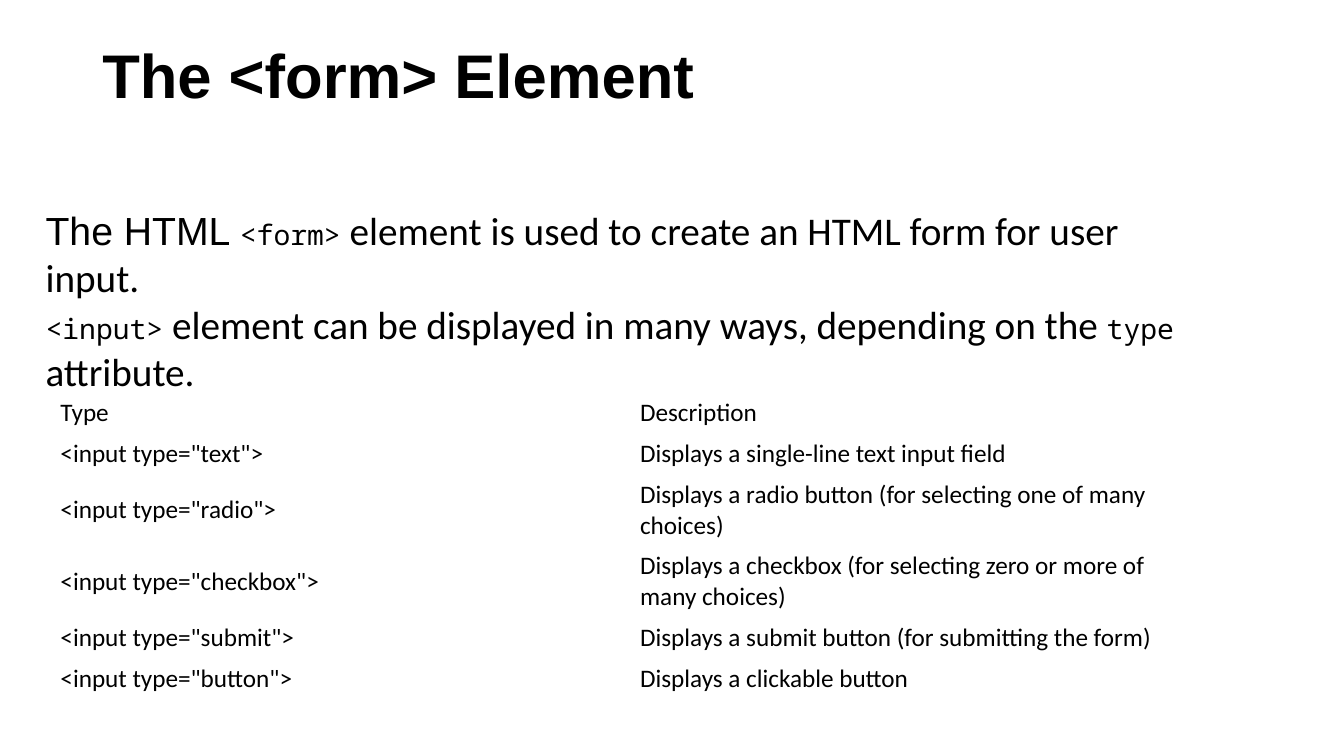
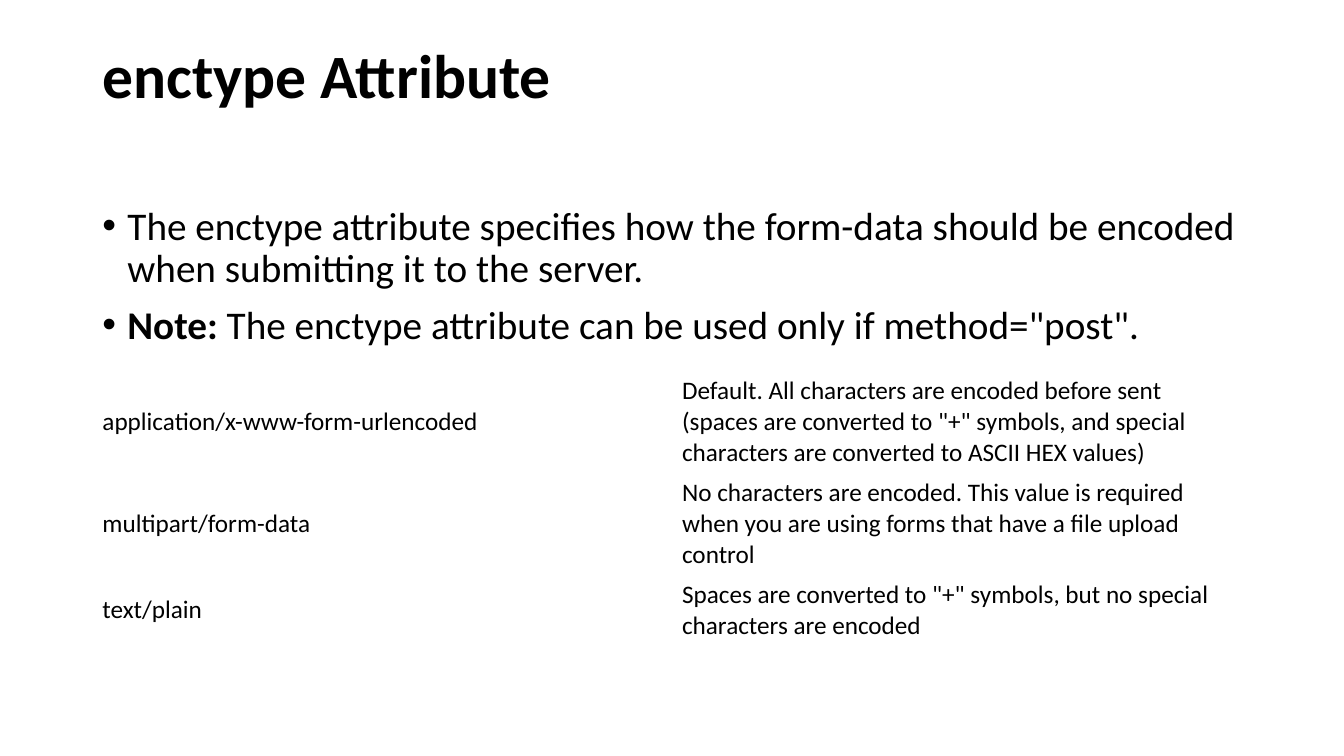
"""Build two slides about HTML form elements and their encoding."""
from dataclasses import dataclass

from lxml import etree
from pptx import Presentation
from pptx import util as u
from pptx.dml.color import RGBColor
from pptx.enum import text
from pptx.oxml.ns import qn

PX = 9525


@dataclass(frozen=True)
class Style:
    """Font, size and weight of a piece of text."""
    font: str
    size: int
    bold: bool = False


@dataclass(frozen=True)
class Theme:
    """Colours, type styles and measures shared by the slides."""
    ink: RGBColor = RGBColor(0, 0, 0)
    title: Style = Style("Calibri", 44, True)
    title_arial: Style = Style("Arial", 44, True)
    body: Style = Style("Calibri", 28)
    body_arial: Style = Style("Arial", 28)
    strong: Style = Style("Calibri", 28, True)
    code: Style = Style("Noto Sans Mono", 20)
    cell: Style = Style("Calibri", 18)
    margin: int = 88
    width: int = 1104
    tight: float = 0.9
    bullet_gap: int = 10
    bullet_indent: int = 24
    row: int = 39
    extra_line: int = 29


THEME = Theme()

FORM_TEXT = [
    [("The HTML ", THEME.body_arial), ("<form>", THEME.code),
     (" element is used to create an HTML form for user input.", THEME.body)],
    [("<input>", THEME.code),
     (" element can be displayed in many ways, depending on the ", THEME.body),
     ("type", THEME.code), (" attribute.", THEME.body)],
]
INPUT_TYPES = [
    ("Type", "Description", 1),
    ('<input type="text">', "Displays a single-line text input field", 1),
    ('<input type="radio">',
     "Displays a radio button (for selecting one of many choices)", 2),
    ('<input type="checkbox">',
     "Displays a checkbox (for selecting zero or more of many choices)", 2),
    ('<input type="submit">',
     "Displays a submit button (for submitting the form)", 1),
    ('<input type="button">', "Displays a clickable button", 1),
]
ENCTYPE_TEXT = [
    [("The enctype attribute specifies how the form-data should be encoded "
      "when submitting it to the server.", THEME.body)],
    [("Note:", THEME.strong),
     (' The enctype attribute can be used only if method="post".', THEME.body)],
]
ENCODINGS = [
    ("application/x-www-form-urlencoded",
     'Default. All characters are encoded before sent (spaces are converted '
     'to "+" symbols, and special characters are converted to ASCII HEX values)', 3),
    ("multipart/form-data",
     "No characters are encoded. This value is required when you are using "
     "forms that have a file upload control", 3),
    ("text/plain",
     'Spaces are converted to "+" symbols, but no special characters are encoded', 2),
]


def px(count):
    """Turn whole pixels into EMU."""
    return u.Emu(count * PX)


def set_font(font, style):
    """Apply a style in the ink colour."""
    font.name, font.size, font.bold = style.font, u.Pt(style.size), style.bold
    font.color.rgb = THEME.ink


def write(paragraph, pieces):
    """Fill a paragraph, styling it whole where its pieces agree."""
    uniform = len({style for _, style in pieces}) == 1
    if uniform:
        set_font(paragraph.font, pieces[0][1])
    for words, style in pieces:
        run = paragraph.add_run()
        run.text = words
        if not uniform:
            set_font(run.font, style)


def add_bullet(paragraph):
    """Give a paragraph a hanging bullet with tight lines."""
    props = paragraph._p.get_or_add_pPr()
    indent = px(THEME.bullet_indent)
    props.set("marL", str(indent))
    props.set("indent", str(-indent))
    etree.SubElement(props, qn("a:buFont")).set("typeface", "Arial")
    etree.SubElement(props, qn("a:buChar")).set("char", "•")
    paragraph.line_spacing = THEME.tight
    paragraph.space_before = u.Pt(THEME.bullet_gap)


def add_text(slide, left, top, height):
    """Add a wrapping, top-anchored text frame of the shared width."""
    frame = slide.shapes.add_textbox(
        px(left), px(top), px(THEME.width), px(height)).text_frame
    frame.word_wrap = True
    frame.vertical_anchor = text.MSO_ANCHOR.TOP
    return frame


def add_title(slide, words, style):
    """Add the slide title."""
    heading = add_text(slide, THEME.margin, 38, 139).paragraphs[0]
    heading.line_spacing = THEME.tight
    write(heading, [(words, style)])


def add_body(slide, left, paragraphs, bulleted=False):
    """Add the explanatory paragraphs."""
    frame = add_text(slide, left, 192, 457)
    for index, pieces in enumerate(paragraphs):
        paragraph = frame.add_paragraph() if index else frame.paragraphs[0]
        if bulleted:
            add_bullet(paragraph)
        write(paragraph, pieces)


def add_definitions(slide, left, top, entries):
    """Add a plain two-column table with rows sized by their line count."""
    heights = [THEME.row + THEME.extra_line * (lines - 1) for *_, lines in entries]
    table = slide.shapes.add_table(
        len(entries), 2, px(left), px(top), px(THEME.width), px(sum(heights))).table
    table.first_row = table.horz_banding = False
    for row, height, (term, meaning, _) in zip(table.rows, heights, entries):
        row.height = px(height)
        for cell, words in zip(row.cells, (term, meaning)):
            cell.fill.background()
            cell.vertical_anchor = text.MSO_ANCHOR.MIDDLE
            write(cell.text_frame.paragraphs[0], [(words, THEME.cell)])


def main():
    """Build and save the presentation."""
    deck = Presentation()
    deck.slide_width, deck.slide_height = px(1280), px(720)
    blank = deck.slide_layouts[6]

    form = deck.slides.add_slide(blank)
    add_title(form, "The <form> Element", THEME.title_arial)
    add_body(form, 34, FORM_TEXT)
    add_definitions(form, 48, 374, INPUT_TYPES)

    enctype = deck.slides.add_slide(blank)
    add_title(enctype, "enctype Attribute", THEME.title)
    add_body(enctype, THEME.margin, ENCTYPE_TEXT, bulleted=True)
    add_definitions(enctype, THEME.margin, 353, ENCODINGS)

    deck.save("out.pptx")


if __name__ == "__main__":
    main()
